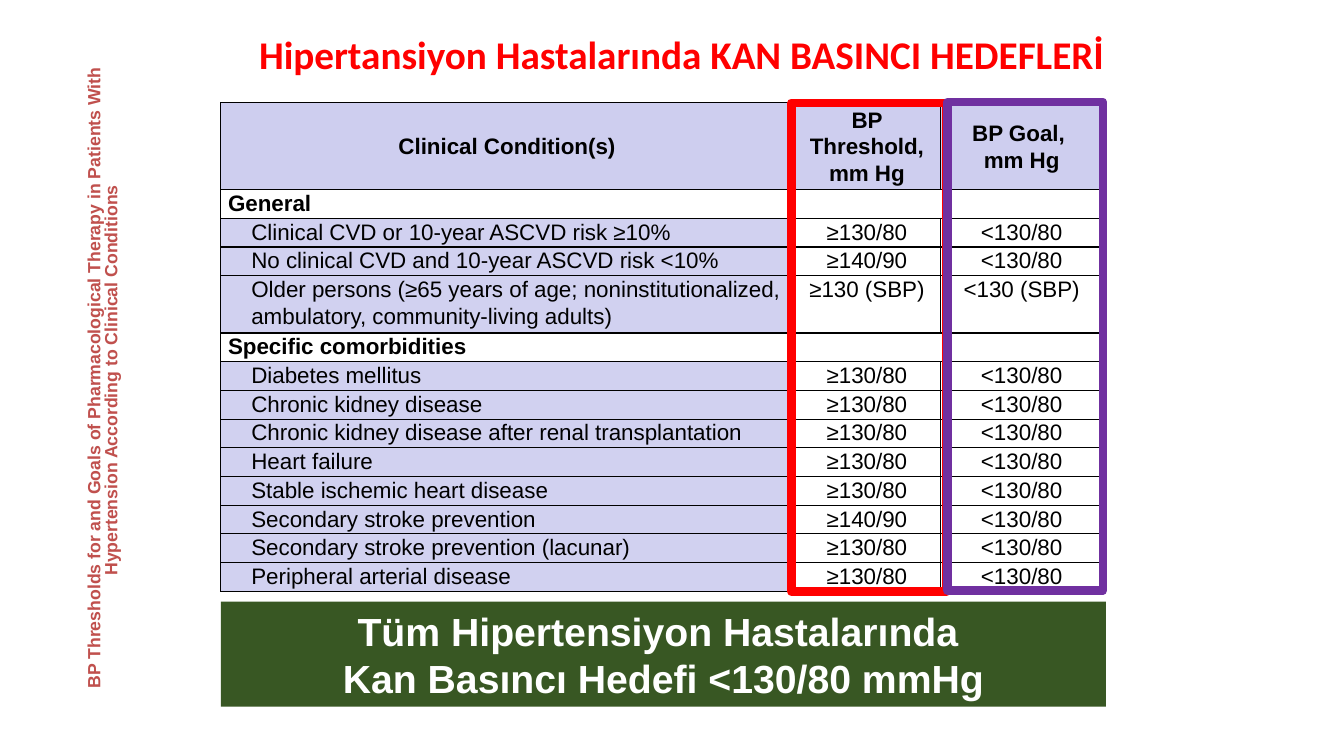
from dataclasses import dataclass

from lxml.etree import SubElement
from pptx import Presentation
from pptx.dml.color import RGBColor as Rgb
from pptx.enum.shapes import MSO_SHAPE as Form
from pptx.enum.text import MSO_ANCHOR as Anchor, MSO_AUTO_SIZE as Auto, PP_ALIGN as Align
from pptx.oxml.ns import qn
from pptx.util import Emu, Inches, Pt

# Slide grid: 100 columns by 100 rows
WIDE, HIGH = Inches(13.33), Inches(7.5)

INK = {
    "black": "000000", "white": "FFFFFF", "red": "FF0000", "purple": "7030A0",
    "green": "385723", "rust": "C0504D", "head": "CECEEF", "lilac": "D1D1F0",
}


@dataclass
class Box:
    left: float
    top: float
    width: float
    height: float


@dataclass
class Row:
    name: str
    limit: str = ""
    goal: str = ""
    size: float = 3.8

    @property
    def group(self) -> bool:
        return not self.limit


@dataclass
class Frame:
    box: Box
    hue: str


COLS = (42.6, 10.95, 12.08)
GRID = Box(16.43, 13.6, sum(COLS), 64.67)
HEAD = Row("Clinical Condition(s)", "BP Threshold, mm Hg", "BP Goal, \nmm Hg", 11.47)
USUAL = ("≥130/80", "<130/80")
HIGHER = ("≥140/90", "<130/80")
ROWS = (
    Row("General"),
    Row("Clinical CVD or 10-year ASCVD risk ≥10%", *USUAL),
    Row("No clinical CVD and 10-year ASCVD risk <10%", *HIGHER),
    Row("Older persons (≥65 years of age; noninstitutionalized, "
        "ambulatory, community-living adults)", "≥130 (SBP)", "<130 (SBP)", 7.6),
    Row("Specific comorbidities"),
    Row("Diabetes mellitus", *USUAL),
    Row("Chronic kidney disease", *USUAL),
    Row("Chronic kidney disease after renal transplantation", *USUAL),
    Row("Heart failure", *USUAL),
    Row("Stable ischemic heart disease", *USUAL),
    Row("Secondary stroke prevention", *HIGHER),
    Row("Secondary stroke prevention (lacunar)", *USUAL),
    Row("Peripheral arterial disease", *USUAL),
)
FRAMES = (
    Frame(Box(58.88, 13.6, 11.55, 64.67), "red"),
    Frame(Box(70.5, 13.47, 11.55, 64.67), "purple"),
)


def color(name: str) -> Rgb:
    return Rgb.from_string(INK[name])


def col(count: float) -> Emu:
    return Emu(round(WIDE * count / 100))


def row(count: float) -> Emu:
    return Emu(round(HIGH * count / 100))


def place(box: Box) -> tuple:
    return col(box.left), row(box.top), col(box.width), row(box.height)


def write(frame, text: str, *, size: float = 16, hue: str = "black", font: str = "Arial",
          bold: bool = True, align=Align.CENTER, space: float = 1, indent: float = 0) -> None:
    frame.word_wrap = True
    for spot, line in enumerate(text.split("\n")):
        para = frame.add_paragraph() if spot else frame.paragraphs[0]
        para.alignment, para.line_spacing = align, space
        if indent:
            props = para._p.get_or_add_pPr()
            props.set("marL", str(col(indent)))
            props.set("indent", "0")
        run = para.add_run()
        run.text = line
        run.font.name, run.font.size, run.font.bold = font, Pt(size), bold
        run.font.color.rgb = color(hue)


def edge(cell) -> None:
    props = cell._tc.get_or_add_tcPr()
    for side in ("lnL", "lnR", "lnT", "lnB"):
        line = SubElement(props, qn(f"a:{side}"), w=str(Pt(1)))
        fill = SubElement(line, qn("a:solidFill"))
        SubElement(fill, qn("a:srgbClr"), val=INK["black"])


def block(slide, box: Box):
    shape = slide.shapes.add_shape(Form.RECTANGLE, *place(box))
    shape.shadow.inherit = False
    return shape


def label(slide, box: Box, text: str, **style):
    shape = slide.shapes.add_textbox(*place(box))
    write(shape.text_frame, text, **style)
    return shape


def chart(slide) -> None:
    items = (HEAD, *ROWS)
    table = slide.shapes.add_table(len(items), len(COLS), *place(GRID)).table
    table.first_row = table.horz_banding = False
    for part, width in zip(table.columns, COLS):
        part.width = col(width)
    for y, item in enumerate(items):
        table.rows[y].height = row(item.size)
        top = item is HEAD
        for x, text in enumerate((item.name, item.limit, item.goal)):
            cell = table.cell(y, x)
            cell.margin_left = cell.margin_right = col(0.54)
            cell.margin_top = cell.margin_bottom = 0
            cell.vertical_anchor = Anchor.MIDDLE if top else Anchor.TOP
            edge(cell)
            cell.fill.solid()
            shade = "head" if top else "white" if x or item.group else "lilac"
            cell.fill.fore_color.rgb = color(shade)
            write(cell.text_frame, text, bold=top or item.group, space=1.07,
                  align=Align.CENTER if top or x else Align.LEFT,
                  indent=0 if top or x or item.group else 1.73)
        if item.group:
            table.cell(y, 0).merge(table.cell(y, 2))


def main() -> None:
    deck = Presentation()
    deck.slide_width, deck.slide_height = WIDE, HIGH
    slide = deck.slides.add_slide(deck.slide_layouts[6])

    # Table of thresholds and goals
    chart(slide)

    # Key message
    banner = block(slide, Box(GRID.left, 79.6, 65.85, 13.87))
    banner.fill.solid()
    banner.fill.fore_color.rgb = color("green")
    banner.line.fill.background()
    banner.text_frame.vertical_anchor = Anchor.MIDDLE
    write(banner.text_frame, "Tüm Hipertensiyon Hastalarında \nKan Basıncı Hedefi <130/80 mmHg",
          size=28, hue="white")

    # Frames round the value columns
    for item in FRAMES:
        shape = block(slide, item.box)
        shape.fill.background()
        shape.line.color.rgb = color(item.hue)
        shape.line.width = Pt(6)

    # Title
    title = label(slide, Box(12.75, 3.33, 75.9, 7.6),
                  "Hipertansiyon Hastalarında KAN BASINCI HEDEFLERİ",
                  size=28, hue="red", font="Calibri")
    title.text_frame.auto_size = Auto.SHAPE_TO_FIT_TEXT

    # Side caption
    side = label(slide, Box(-16.73, 47.07, 48.9, 5.87),
                 "BP Thresholds for and Goals of Pharmacological Therapy in Patients With "
                 "Hypertension According to Clinical Conditions ",
                 size=12.6, hue="rust", space=0.8)
    side.rotation = 270
    side.text_frame.vertical_anchor = Anchor.MIDDLE
    side.text_frame.margin_top = side.text_frame.margin_bottom = row(0.53)

    deck.save("out.pptx")


if __name__ == "__main__":
    main()
